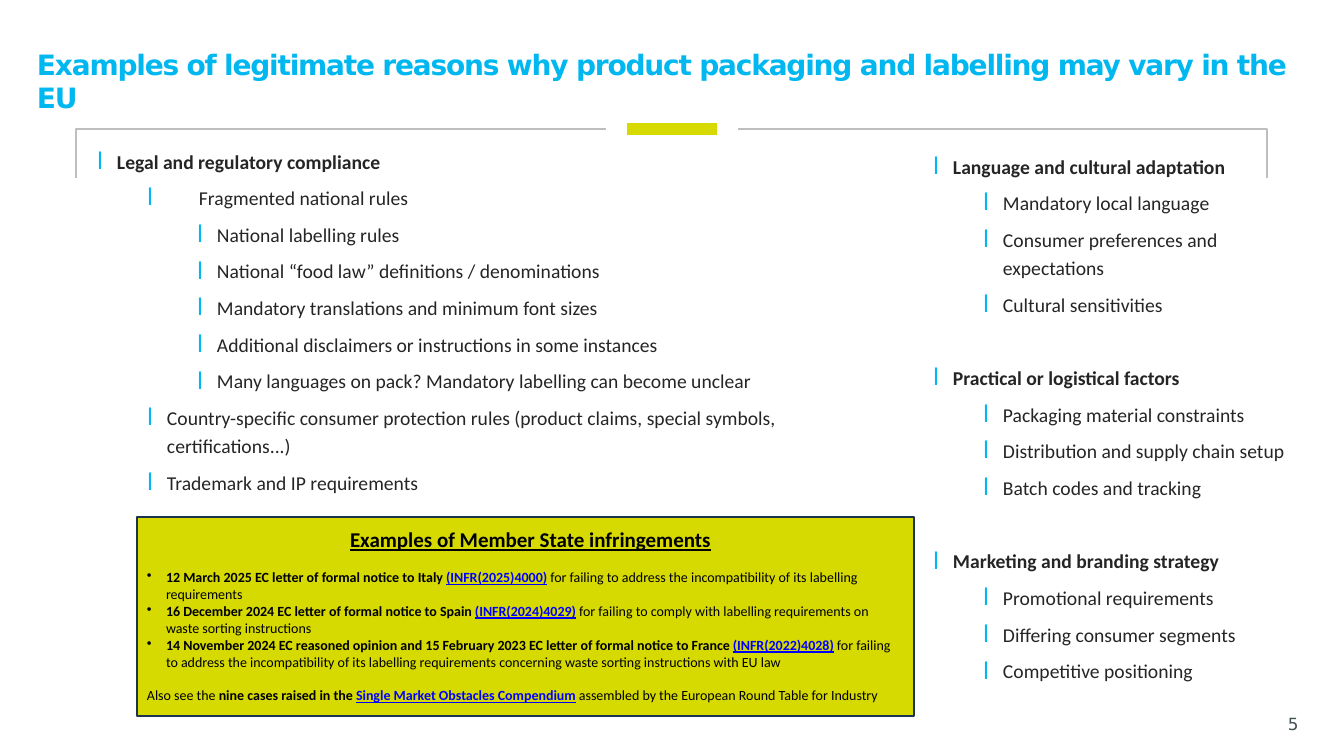
"""Builds the slide on why packaging and labelling vary in the EU."""
from dataclasses import dataclass

from lxml import etree
from pptx import Presentation
from pptx.dml.color import RGBColor
from pptx.enum.shapes import MSO_CONNECTOR, MSO_SHAPE
from pptx.enum.text import MSO_ANCHOR, MSO_AUTO_SIZE, PP_ALIGN
from pptx.oxml.ns import qn
from pptx.util import Pt

LEFT, CENTER = PP_ALIGN.LEFT, PP_ALIGN.CENTER
TOP, NO_FIT = MSO_ANCHOR.TOP, MSO_AUTO_SIZE.NONE
RECTANGLE, STRAIGHT = MSO_SHAPE.RECTANGLE, MSO_CONNECTOR.STRAIGHT


@dataclass(frozen=True)
class Theme:
    """Colours, fonts and type sizes of the slide."""
    accent: str = "00B7F0"
    lime: str = "D6DA00"
    frame: str = "BEBEBE"
    navy: str = "1C334E"
    ink: str = "252525"
    black: str = "000000"
    link: str = "0000FF"
    muted: str = "444F54"
    display: str = "DejaVu Sans"
    text: str = "Calibri"
    title_size: float = 20
    callout_size: float = 15
    list_size: float = 14
    number_size: float = 12
    note_size: float = 10


def px(length):
    """Turn slide pixels into EMU."""
    return round(length * 914400 / 100.8)


class SlideBuilder:
    """Holds the theme and the current page, and adds elements to it."""

    def __init__(self, page, theme):
        self.page, self.theme = page, theme
        self.shapes = page.shapes

    def place(self, shape, left, top, width, height):
        """Move a shape to a pixel frame."""
        values = {"left": left, "top": top, "width": width, "height": height}
        for name, value in values.items():
            setattr(shape, name, px(value))

    def frame(self, shape, inset_left=0, inset_top=0):
        """Prepare and return the text frame of a shape."""
        values = {"word_wrap": True, "auto_size": NO_FIT, "vertical_anchor": TOP,
                  "margin_left": px(inset_left), "margin_top": px(inset_top),
                  "margin_right": 0, "margin_bottom": 0}
        for name, value in values.items():
            setattr(shape.text_frame, name, value)
        return shape.text_frame

    def paragraph(self, frame, first, **values):
        """Return the first or a new paragraph with the given format."""
        para = frame.paragraphs[0] if first else frame.add_paragraph()
        for name, value in {"alignment": LEFT, "space_before": Pt(0), **values}.items():
            setattr(para, name, value)
        return para

    def span(self, para, text, color, font, size, tracking=0, **values):
        """Add a run of text to a paragraph."""
        span = para.add_run()
        span.text = text
        span.font.color.rgb = RGBColor.from_string(color)
        for name, value in {"name": font, "size": Pt(size), **values}.items():
            setattr(span.font, name, value)
        if tracking:
            span.font._element.set("spc", str(tracking))

    def bullet(self, para, char, margin, hang, right=0, **marker):
        """Give a paragraph a hanging bullet with optional marker style."""
        properties = para._p.get_or_add_pPr()
        for name, value in {"marL": margin, "marR": right, "indent": -hang}.items():
            properties.set(name, str(px(value)))
        if marker:
            color = etree.SubElement(properties, qn("a:buClr"))
            etree.SubElement(color, qn("a:srgbClr"), val=marker["color"])
            etree.SubElement(properties, qn("a:buSzPct"), val=str(marker["percent"] * 1000))
            etree.SubElement(properties, qn("a:buFont"), typeface=marker["font"])
        etree.SubElement(properties, qn("a:buChar"), char=char)

    def title(self, text, *bounds):
        """Fill the title placeholder."""
        theme, shape = self.theme, self.shapes.title
        self.place(shape, *bounds)
        para = self.paragraph(self.frame(shape), True)
        self.span(para, text, theme.accent, theme.display, theme.title_size, -88, bold=True)

    def outline(self, index, groups, *bounds):
        """Fill a body placeholder with headed groups of nested items."""
        theme, shape = self.theme, self.page.placeholders[index]
        self.place(shape, *bounds)
        frame, first = self.frame(shape), True
        for heading, items in groups:
            for level, text, hang in [(0, heading, 20), *items]:
                gap = 0 if first else 6.15 if level else 32.5
                para = self.paragraph(frame, first, level=level, line_spacing=Pt(20),
                                      space_before=Pt(gap))
                self.bullet(para, "l", 50 * level + hang, hang, color=theme.accent,
                            percent=118, font=theme.display)
                self.span(para, text, theme.ink, theme.text, theme.list_size, bold=level == 0)
                first = False

    def bracket(self, points):
        """Draw an open grey frame line."""
        pen = self.shapes.build_freeform(*points[0], scale=px(100) / 100)
        pen.add_line_segments(points[1:], close=False)
        shape = pen.convert_to_shape()
        shape.shadow.inherit = False
        shape.fill.background()
        self.stroke(shape.line, self.theme.frame, 2)

    def stroke(self, line, color, width):
        """Set the colour and width of a line."""
        line.color.rgb = RGBColor.from_string(color)
        line.width = Pt(width)

    def bar(self, left, right, y):
        """Draw the thick accent line."""
        line = self.shapes.add_connector(STRAIGHT, px(left), px(y), px(right), px(y))
        etree.SubElement(line._element.spPr, qn("a:effectLst"))
        self.stroke(line.line, self.theme.lime, 8.5)

    def callout(self, heading, notes, closing, *bounds):
        """Draw the filled box with a heading, bulleted notes and a closing line."""
        theme = self.theme
        box = self.shapes.add_shape(RECTANGLE, *map(px, bounds))
        box.shadow.inherit = False
        box.fill.solid()
        box.fill.fore_color.rgb = RGBColor.from_string(theme.lime)
        self.stroke(box.line, theme.navy, 2)
        frame = self.frame(box, 10, 10)
        para = self.paragraph(frame, True, alignment=CENTER)
        self.span(para, heading, theme.black, theme.text, theme.callout_size,
                  bold=True, underline=True)
        styles = {"plain": (theme.black, {"bold": False}),
                  "strong": (theme.black, {"bold": True}),
                  "link": (theme.link, {"bold": True, "underline": True})}
        for number, spans in enumerate([*notes, closing]):
            gap = 12 if number in (0, len(notes)) else 0
            para = self.paragraph(frame, False, space_before=Pt(gap))
            if number < len(notes):
                self.bullet(para, "•", 19, 19, right=20)
            for style, text in spans:
                color, values = styles[style]
                self.span(para, text, color, theme.text, theme.note_size, **values)

    def page_number(self, text, *bounds):
        """Write the page number."""
        theme = self.theme
        frame = self.frame(self.shapes.add_textbox(*map(px, bounds)))
        self.span(self.paragraph(frame, True), text, theme.muted, theme.display,
                  theme.number_size)


def items(level, *texts, hang=20):
    """Return list items that share a level."""
    return [(level, text, hang) for text in texts]


def note(lead, case, rest):
    """Return the spans of one infringement note."""
    return [("strong", lead + " "), ("link", case), ("plain", " " + rest)]


LEGAL = [("Legal and regulatory compliance", [
    *items(1, "Fragmented national rules", hang=52),
    *items(2, "National labelling rules", "National “food law” definitions / denominations",
           "Mandatory translations and minimum font sizes",
           "Additional disclaimers or instructions in some instances",
           "Many languages on pack? Mandatory labelling can become unclear"),
    *items(1, "Country-specific consumer protection rules (product claims, special symbols, "
              "certifications...)", "Trademark and IP requirements")])]
OTHER = [
    ("Language and cultural adaptation", items(
        1, "Mandatory local language", "Consumer preferences and expectations",
        "Cultural sensitivities")),
    ("Practical or logistical factors", items(
        1, "Packaging material constraints", "Distribution and supply chain setup",
        "Batch codes and tracking")),
    ("Marketing and branding strategy", items(
        1, "Promotional requirements", "Differing consumer segments",
        "Competitive positioning"))]
NOTES = [
    note("12 March 2025 EC letter of formal notice to Italy", "(INFR(2025)4000)",
         "for failing to address the incompatibility of its labelling requirements"),
    note("16 December 2024 EC letter of formal notice to Spain", "(INFR(2024)4029)",
         "for failing to comply with labelling requirements on waste sorting instructions"),
    note("14 November 2024 EC reasoned opinion and 15 February 2023 EC letter of formal "
         "notice to France", "(INFR(2022)4028)",
         "for failing to address the incompatibility of its labelling requirements "
         "concerning waste sorting instructions with EU law")]
CLOSING = [("plain", "Also see the "), ("strong", "nine cases raised in the "),
           ("link", "Single Market Obstacles Compendium"),
           ("plain", " assembled by the European Round Table for Industry")]


def main():
    """Build and save the deck."""
    deck = Presentation()
    deck.slide_width, deck.slide_height = px(1344), px(756)
    slide = SlideBuilder(deck.slides.add_slide(deck.slide_layouts[3]), Theme())
    slide.bracket([(606, 129), (76, 129), (76, 178)])
    slide.bar(627, 717, 129)
    slide.bracket([(738, 129), (1267, 129), (1267, 178)])
    slide.title("Examples of legitimate reasons why product packaging and labelling may "
                "vary in the EU", 37, 47, 1288, 68)
    slide.outline(1, LEGAL, 97, 145, 700, 360)
    slide.outline(2, OTHER, 933, 150, 360, 550)
    slide.callout("Examples of Member State infringements", NOTES, CLOSING, 137, 517, 777, 199)
    slide.page_number("5", 1288, 714, 28, 22)
    deck.save("out.pptx")


if __name__ == "__main__":
    main()
